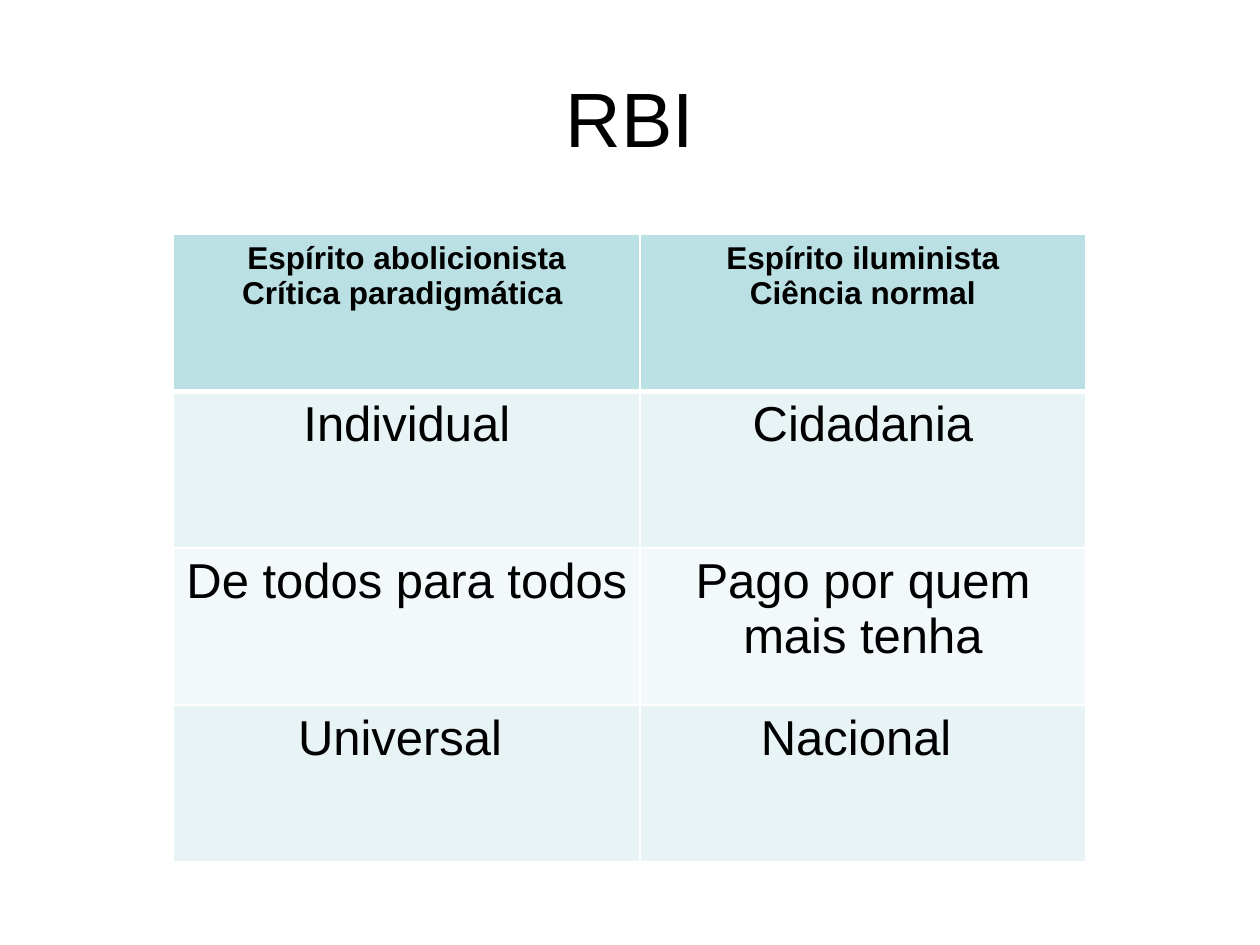
from lxml.etree import SubElement
from pptx import Presentation
from pptx.dml.color import RGBColor
from pptx.enum.text import MSO_ANCHOR as Anchor, PP_ALIGN as Align
from pptx.oxml.ns import qn
from pptx.util import Cm, Pt

TITLE = {"size": Pt(44), "bold": False}
HEADER = {"size": Pt(18), "bold": True}
BODY = {"size": Pt(28), "bold": False}
HEADER_FILL = "BBE0E3"
BAND_FILLS = ["E7F3F4", "F3F9FA"]
ROWS = [
    ["Espírito abolicionista\nCrítica paradigmática ", "Espírito iluminista\nCiência normal"],
    ["Individual", "Cidadania"],
    ["De todos para todos", "Pago por quem mais tenha"],
    ["Universal ", "Nacional "],
]


def colour(value):
    return RGBColor.from_string(value)


class SlideBuilder:
    font_name = "Arial"
    text_colour = "000000"
    border_colour = "FFFFFF"

    def __init__(self, page):
        self.page = page

    def fill_text(self, frame, text, style):
        frame.word_wrap = True
        frame.text = text
        for para in frame.paragraphs:
            para.alignment = Align.CENTER
            for span in para.runs:
                for name, value in {"name": self.font_name, **style}.items():
                    setattr(span.font, name, value)
                span.font.color.rgb = colour(self.text_colour)

    def title(self, text, left, top, width, height):
        box = self.page.shapes.add_textbox(Cm(left), Cm(top), Cm(width), Cm(height))
        box.text_frame.vertical_anchor = Anchor.MIDDLE
        self.fill_text(box.text_frame, text, TITLE)

    def borders(self, cell, widths):
        properties = cell._tc.get_or_add_tcPr()
        for side, width in widths.items():
            line = SubElement(properties, qn(f"a:ln{side}"), w=str(Pt(width)))
            fill = SubElement(line, qn("a:solidFill"))
            SubElement(fill, qn("a:srgbClr"), val=self.border_colour)

    def table(self, rows, left, top, column_widths, row_height):
        grid = self.page.shapes.add_table(
            len(rows), len(column_widths), Cm(left), Cm(top),
            Cm(sum(column_widths)), Cm(row_height * len(rows)),
        ).table
        for column, width in zip(grid.columns, column_widths):
            column.width = Cm(width)
        for index, texts in enumerate(rows):
            grid.rows[index].height = Cm(row_height)
            style = BODY if index else HEADER
            fill = BAND_FILLS[(index - 1) % 2] if index else HEADER_FILL
            widths = {"L": 1, "R": 1, "T": 3 if index == 1 else 1, "B": 1 if index else 3}
            for position, text in enumerate(texts):
                cell = grid.cell(index, position)
                self.borders(cell, widths)
                cell.fill.solid()
                cell.fill.fore_color.rgb = colour(fill)
                self.fill_text(cell.text_frame, text, style)


def main():
    deck = Presentation()
    deck.slide_width, deck.slide_height = Cm(25.4), Cm(19.05)
    builder = SlideBuilder(deck.slides.add_slide(deck.slide_layouts[6]))
    builder.title("RBI", 1.27, 0.76, 22.86, 3.18)
    builder.table(ROWS, 3.5, 4.73, [9.4, 8.99], 3.16)
    deck.save("out.pptx")


if __name__ == "__main__":
    main()
